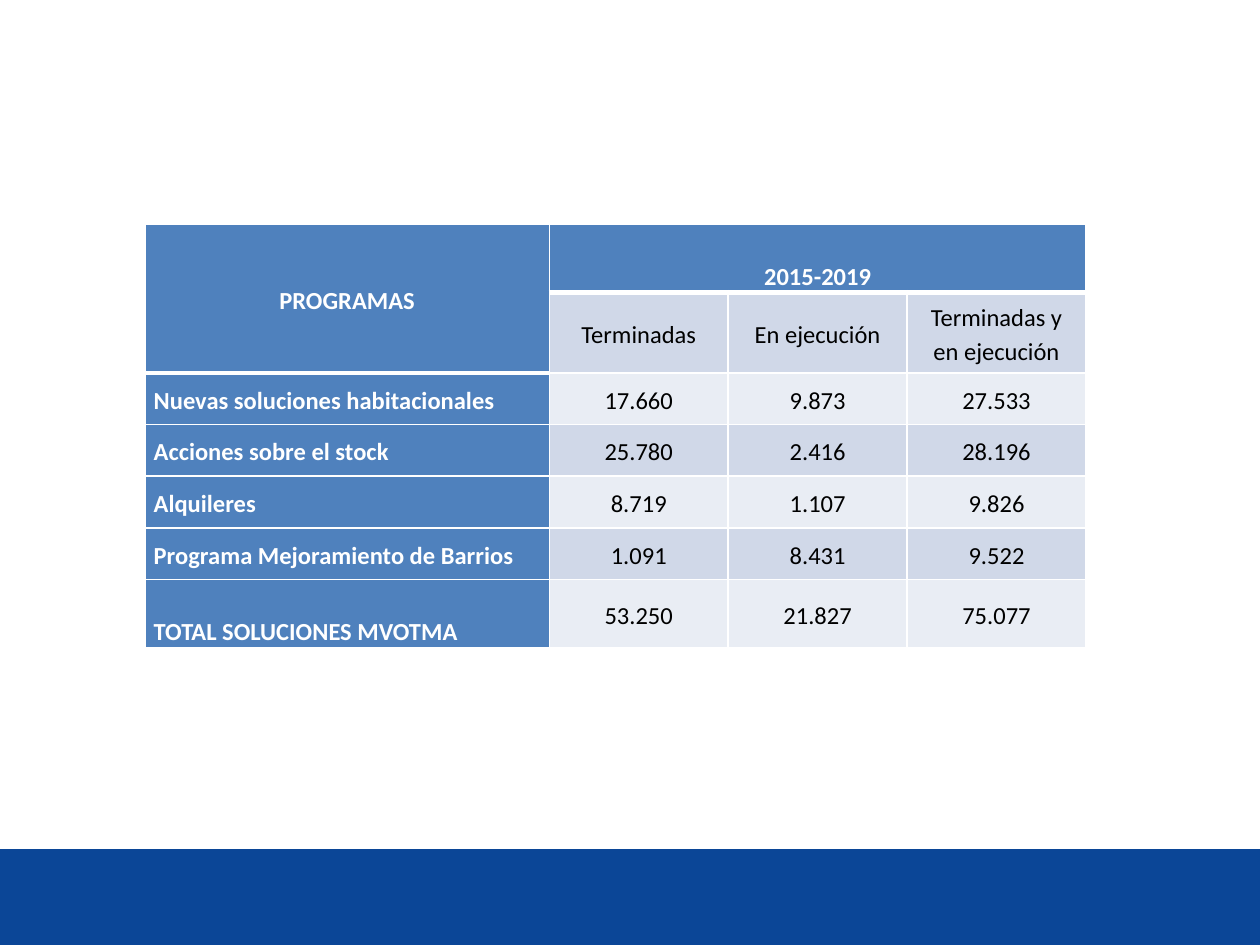
from lxml.etree import SubElement
from pptx import Presentation
from pptx.dml.color import RGBColor
from pptx.enum.shapes import MSO_SHAPE
from pptx.enum.text import MSO_ANCHOR, PP_ALIGN
from pptx.oxml.ns import qn
from pptx.util import Inches, Pt

COLORS = {
    "footer": "0B4697", "header": "4F81BD", "band_dark": "D0D8E8",
    "band_light": "E9EDF4", "white": "FFFFFF", "black": "000000",
}
ROWS = [
    ("PROGRAMAS", "2015-2019", "", ""),
    ("", "Terminadas", "En ejecución", "Terminadas y\nen ejecución"),
    ("Nuevas soluciones habitacionales", "17.660", "9.873", "27.533"),
    ("Acciones sobre el stock", "25.780", "2.416", "28.196"),
    ("Alquileres", "8.719", "1.107", "9.826"),
    ("Programa Mejoramiento de Barrios", "1.091", "8.431", "9.522"),
    ("TOTAL SOLUCIONES MVOTMA", "53.250", "21.827", "75.077"),
]
COLUMN_WIDTHS = [3.21] + [1.42] * 3
ROW_HEIGHTS = [0.54, 0.64] + [0.41] * 4 + [0.54]
LAST_ROW = len(ROWS) - 1
BOTTOM_ANCHORED = {(0, 1), (LAST_ROW, 0)}
THICK_BELOW = {(0, 0), (1, 0), (0, 1), (0, 2), (0, 3)}


def color(name):
    return RGBColor.from_string(COLORS[name])


def set_borders(cell, widths):
    """Draw white borders; widths maps a side (L, R, T, B) to points."""
    properties = cell._tc.get_or_add_tcPr()
    for side, width in widths.items():
        line = SubElement(properties, qn(f"a:ln{side}"), w=str(Pt(width)))
        fill = SubElement(line, qn("a:solidFill"))
        SubElement(fill, qn("a:srgbClr"), val=COLORS["white"])


def format_cell(cell, row, column):
    is_header = row == 0 or column == 0
    above_is_thick = (row - 1, column) in THICK_BELOW and (row, column) != (1, 0)
    set_borders(cell, {
        "L": 1, "R": 1,
        "T": 3 if above_is_thick else 1,
        "B": 3 if (row, column) in THICK_BELOW else 1,
    })
    band = "band_dark" if row % 2 else "band_light"
    cell.fill.solid()
    cell.fill.fore_color.rgb = color("header" if is_header else band)
    cell.margin_left = cell.margin_right = Inches(0.07)
    cell.margin_top = cell.margin_bottom = 0
    is_bottom = (row, column) in BOTTOM_ANCHORED
    cell.vertical_anchor = MSO_ANCHOR.BOTTOM if is_bottom else MSO_ANCHOR.MIDDLE
    cell.text_frame.text = ROWS[row][column]
    is_label = column == 0 and row > 1
    for paragraph in cell.text_frame.paragraphs:
        paragraph.alignment = PP_ALIGN.LEFT if is_label else PP_ALIGN.CENTER
        paragraph.line_spacing = 1.15
        paragraph.font.size = Pt(14)
        for run in paragraph.runs:
            run.font.name = "Calibri"
            run.font.size = Pt(14)
            run.font.bold = is_header
            run.font.color.rgb = color("white" if is_header else "black")


def add_footer(slide):
    footer = slide.shapes.add_shape(
        MSO_SHAPE.RECTANGLE, 0, Inches(6.74), Inches(10), Inches(0.76))
    footer.shadow.inherit = False
    footer.fill.solid()
    footer.fill.fore_color.rgb = color("footer")
    footer.line.fill.background()


def add_programs_table(slide):
    table = slide.shapes.add_table(
        len(ROWS), len(COLUMN_WIDTHS), Inches(1.15), Inches(1.78),
        Inches(sum(COLUMN_WIDTHS)), Inches(sum(ROW_HEIGHTS))).table
    for column, width in zip(table.columns, COLUMN_WIDTHS):
        column.width = Inches(width)
    for row, height in zip(table.rows, ROW_HEIGHTS):
        row.height = Inches(height)
    for row in range(len(ROWS)):
        for column in range(len(COLUMN_WIDTHS)):
            format_cell(table.cell(row, column), row, column)
    table.cell(0, 0).merge(table.cell(1, 0))
    table.cell(0, 1).merge(table.cell(0, 3))


def main():
    presentation = Presentation()
    presentation.slide_width = Inches(10)
    presentation.slide_height = Inches(7.5)
    slide = presentation.slides.add_slide(presentation.slide_layouts[6])
    add_footer(slide)
    add_programs_table(slide)
    presentation.save("out.pptx")


if __name__ == "__main__":
    main()
